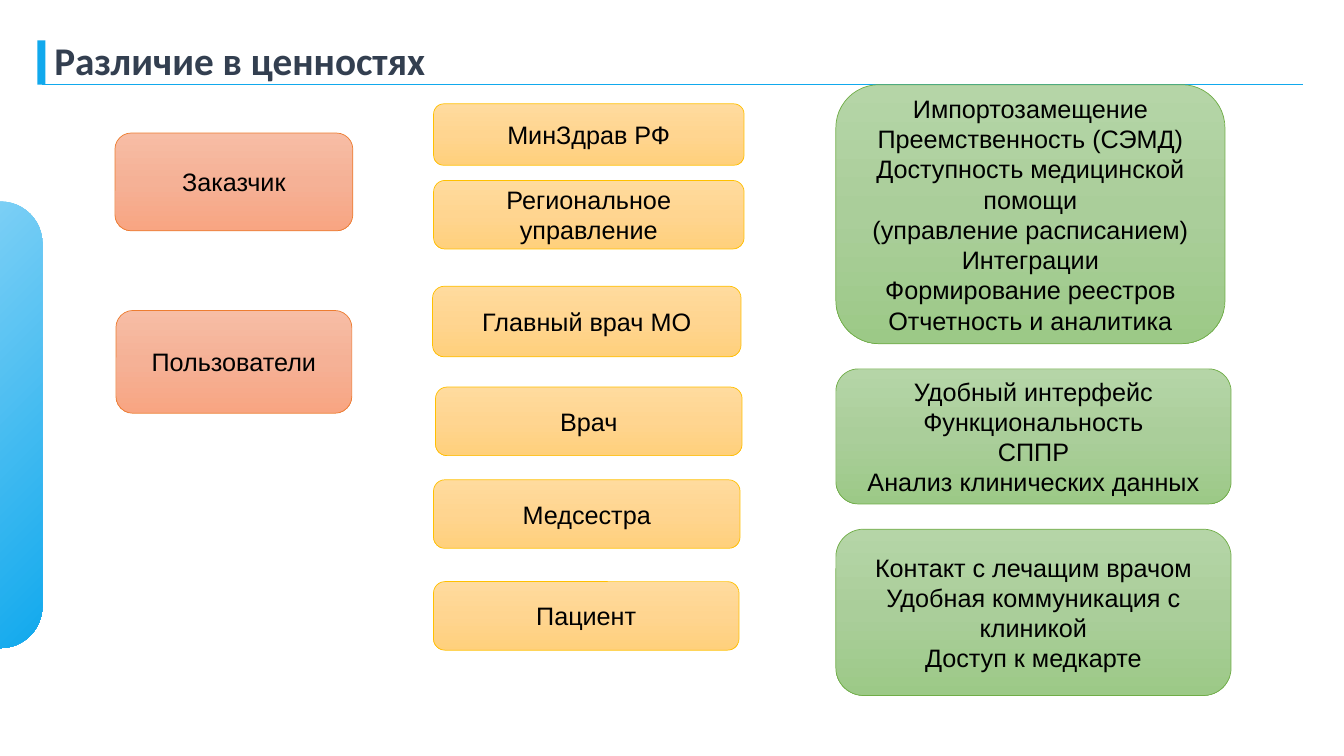
"""Builds the slide on how values differ between customers and users."""
from lxml.etree import SubElement as Sub
from pptx import Presentation
from pptx.dml.color import RGBColor as Rgb
from pptx.enum.shapes import MSO_CONNECTOR as Conn, MSO_SHAPE as Kind
from pptx.enum.text import MSO_ANCHOR as Anchor, PP_ALIGN as Align
from pptx.oxml.ns import qn
from pptx.util import Inches, Pt

TITLE = "Различие в ценностях"
GROUPS = {
    "sides": [
        (1.14, 1.32, 2.36, 0.97, ["Заказчик"]),
        (1.15, 3.08, 2.34, 1.02, ["Пользователи"]),
    ],
    "roles": [
        (4.3, 1.03, 3.08, 0.61, ["МинЗдрав РФ"]),
        (4.3, 1.79, 3.08, 0.68, ["Региональное управление"]),
        (4.29, 2.84, 3.06, 0.7, ["Главный врач МО"]),
        (4.32, 3.84, 3.04, 0.68, ["Врач"]),
        (4.3, 4.76, 3.04, 0.68, ["Медсестра"]),
        (4.3, 5.77, 3.03, 0.68, ["Пациент"]),
    ],
    "values": [
        (8.29, 0.84, 3.86, 2.57, [
            "Импортозамещение",
            "Преемственность (СЭМД)",
            "Доступность медицинской помощи",
            "(управление расписанием)",
            "Интеграции",
            "Формирование реестров Отчетность и аналитика",
        ]),
        (8.29, 3.66, 3.92, 1.34, [
            "Удобный интерфейс",
            "Функциональность",
            "СППР",
            "Анализ клинических данных",
        ]),
        (8.29, 5.25, 3.92, 1.65, [
            "Контакт с лечащим врачом",
            "Удобная коммуникация с клиникой",
            "Доступ к медкарте",
        ]),
    ],
}
THEME = {
    "accent": "11A9ED",
    "panel": ["11A9ED", "86D3F6"],
    "title": {"size": 28, "font": "Calibri", "color": "333F50", "bold": True},
    "body": {"size": 18, "font": "Arial", "color": "000000"},
    "sides": (["F7BDA5", "F5B196", "F8A582"], "ED7D31"),
    "roles": (["FFDB9E", "FFD590", "FFD07C"], "FFC000"),
    "values": (["B5D5A7", "AACE9A", "9CC987"], "70AD47"),
}


def color(code):
    return Rgb.from_string(code)


def write(shape, lines, size, font, color, bold=False, align=Align.CENTER, space=None):
    frame = shape.text_frame
    frame.word_wrap = True
    frame.vertical_anchor = Anchor.MIDDLE
    for i, line in enumerate(lines):
        para = frame.add_paragraph() if i else frame.paragraphs[0]
        para.alignment = align
        para.line_spacing = space
        run = para.add_run()
        run.text = line
        run.font.size = Pt(size)
        run.font.name = font
        run.font.bold = bold
        run.font.color.rgb = Rgb.from_string(color)


def blend(shape, codes, radial=False):
    shape.fill.gradient()
    grad = shape._element.spPr.find(qn("a:gradFill"))
    for child in list(grad):
        grad.remove(child)
    stops = Sub(grad, qn("a:gsLst"))
    for i, code in enumerate(codes):
        stop = Sub(stops, qn("a:gs"), pos=str(100000 * i // (len(codes) - 1)))
        Sub(stop, qn("a:srgbClr"), val=code)
    if radial:
        route = Sub(grad, qn("a:path"), path="circle")
        Sub(route, qn("a:fillToRect"), l="100000", t="100000")
    else:
        Sub(grad, qn("a:lin"), ang="5400000", scaled="0")


def block(slide, box, kind=Kind.ROUNDED_RECTANGLE, edge=None):
    shape = slide.shapes.add_shape(kind, *map(Inches, box))
    shape.shadow.inherit = False
    if edge:
        shape.line.color.rgb = color(edge)
        shape.line.width = Pt(0.5)
    else:
        shape.line.fill.background()
    return shape


def frame(slide):
    rule = slide.shapes.add_connector(
        Conn.STRAIGHT, *map(Inches, (0.42, 0.84, 12.92, 0.84)))
    rule.line.color.rgb = color(THEME["accent"])
    rule.line.width = Pt(0.75)
    Sub(rule._element.spPr, qn("a:effectLst"))
    bar = block(slide, (0.37, 0.4, 0.08, 0.44), Kind.RECTANGLE)
    bar.fill.solid()
    bar.fill.fore_color.rgb = color(THEME["accent"])
    panel = block(slide, (-0.5, 2, 0.92, 4.43))
    panel.adjustments[0] = 0.45
    blend(panel, THEME["panel"], radial=True)
    title = slide.shapes.add_textbox(*map(Inches, (0.44, 0.4, 11.5, 0.44)))
    write(title, [TITLE], align=Align.LEFT, space=0.9, **THEME["title"])


def main():
    deck = Presentation()
    deck.slide_width, deck.slide_height = Inches(13.33), Inches(7.5)
    slide = deck.slides.add_slide(deck.slide_layouts[6])
    frame(slide)
    for group, cards in GROUPS.items():
        codes, edge = THEME[group]
        for *box, lines in cards:
            card = block(slide, box, edge=edge)
            blend(card, codes)
            write(card, lines, **THEME["body"])
    deck.save("out.pptx")


if __name__ == "__main__":
    main()
